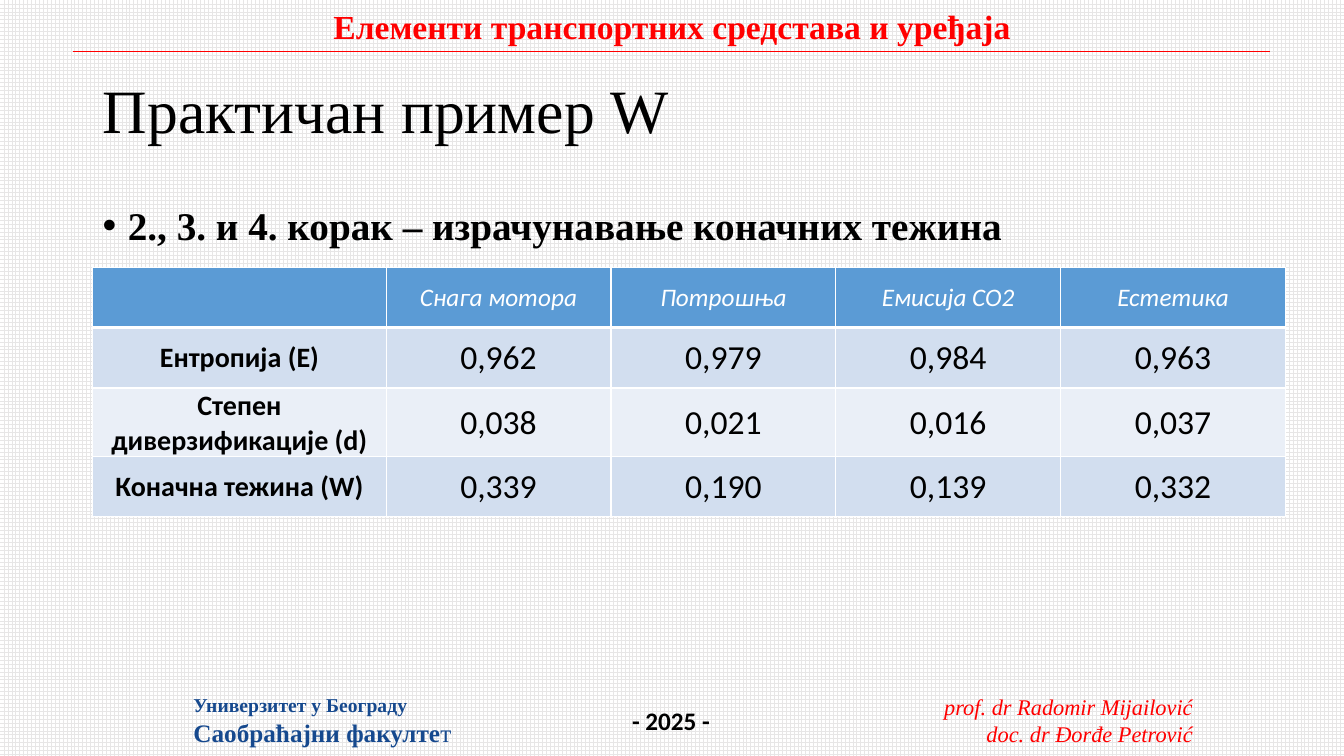
from dataclasses import dataclass
from typing import Optional

from lxml import etree
from pptx import Presentation
from pptx.dml.color import RGBColor
from pptx.enum import dml, shapes, text
from pptx.oxml import ns
from pptx.util import Inches, Pt

RED = RGBColor(0xFF, 0x00, 0x00)
BLACK = RGBColor(0x00, 0x00, 0x00)
WHITE = RGBColor(0xFF, 0xFF, 0xFF)
NAVY = RGBColor(0x16, 0x49, 0x8E)
GRID = RGBColor(0xE7, 0xE6, 0xE6)
HEADER_BLUE = RGBColor(0x5B, 0x9B, 0xD5)
BANDS = (RGBColor(0xD2, 0xDE, 0xEF), RGBColor(0xEA, 0xEF, 0xF7))
SERIF, SANS = "Times New Roman", "Calibri"
LEFT, CENTER, RIGHT = text.PP_ALIGN.LEFT, text.PP_ALIGN.CENTER, text.PP_ALIGN.RIGHT


@dataclass(frozen=True)
class Span:
    words: str
    size: float
    color: RGBColor = BLACK
    font: str = SERIF
    bold: bool = False
    italic: bool = False


@dataclass(frozen=True)
class Label:
    at: tuple[float, float, float, float]
    lines: list[list[Span]]
    align: text.PP_ALIGN = LEFT
    wrap: bool = False


LABELS = [
    Label((9.22, 6.83, 2.71, 0.64),
          [[Span("prof. dr Radomir Mijailović", 16, RED, italic=True)],
           [Span("doc. dr Đorđe Petrović", 16, RED, italic=True)]], RIGHT),
    Label((3.17, 0.01, 6.99, 0.5),
          [[Span("Елементи транспортних средстава и уређаја", 24, RED, bold=True)]], CENTER),
    Label((6.17, 6.95, 0.98, 0.4), [[Span("- 2025 -", 18, font=SANS, bold=True)]]),
    Label((1.82, 6.83, 2.79, 0.64),
          [[Span("Универзитет у Београду", 14, NAVY, bold=True)],
           [Span("Саобраћајни факулте", 18, NAVY, bold=True), Span("т", 18, NAVY)]]),
]
STEP = Label((0.92, 2, 11.5, 4.76),
             [[Span("2., 3. и 4. корак – израчунавање коначних тежина", 28, bold=True)]],
             wrap=True)
WEIGHTS = [
    ["", "Снага мотора", "Потрошња", "Емисија CO2", "Естетика"],
    ["Ентропија (Е)", "0,962", "0,979", "0,984", "0,963"],
    ["Степен диверзификације (d)", "0,038", "0,021", "0,016", "0,037"],
    ["Коначна тежина (W)", "0,339", "0,190", "0,139", "0,332"],
]
COLUMN_WIDTHS = [2.91] + [2.23] * 4
ROW_HEIGHT = 0.6


def add_span(para, span: Span) -> None:
    run = para.add_run()
    run.text = span.words
    font = run.font
    font.name, font.size = span.font, Pt(span.size)
    font.bold, font.italic = span.bold, span.italic
    font.color.rgb = span.color


def add_label(page, label: Label):
    box = page.shapes.add_textbox(*map(Inches, label.at))
    frame = box.text_frame
    frame.word_wrap = label.wrap
    frame.auto_size = (text.MSO_AUTO_SIZE.NONE if label.wrap
                       else text.MSO_AUTO_SIZE.SHAPE_TO_FIT_TEXT)
    for number, line in enumerate(label.lines):
        para = frame.add_paragraph() if number else frame.paragraphs[0]
        para.alignment = label.align
        for span in line:
            add_span(para, span)
    return box


def add_title(page) -> None:
    title = page.shapes.title
    title.left, title.top, title.width, title.height = map(Inches, (0.92, 0.4, 11.5, 1.45))
    frame = title.text_frame
    frame.word_wrap = True
    frame.auto_size = text.MSO_AUTO_SIZE.NONE
    frame.vertical_anchor = text.MSO_ANCHOR.MIDDLE
    para = frame.paragraphs[0]
    para.alignment, para.line_spacing = LEFT, 0.9
    add_span(para, Span("Практичан пример W", 44))


def add_step(page) -> None:
    para = add_label(page, STEP).text_frame.paragraphs[0]
    para.line_spacing = 0.9
    props = para._p.get_or_add_pPr()
    props.set("marL", str(Inches(0.25)))
    props.set("indent", str(Inches(-0.25)))
    etree.SubElement(props, ns.qn("a:buFont"), typeface="Arial")
    etree.SubElement(props, ns.qn("a:buChar"), char="•")


def add_header_rule(page) -> None:
    rule = page.shapes.add_connector(shapes.MSO_CONNECTOR.STRAIGHT,
                                     *map(Inches, (0.72, 0.51, 12.6, 0.51)))
    rule.line.color.rgb = RED
    rule.line.width = Pt(0.5)
    etree.SubElement(rule._element.spPr, ns.qn("a:effectLst"))


def set_border(cell, side: str, points: float) -> None:
    line = etree.SubElement(cell._tc.get_or_add_tcPr(), ns.qn(f"a:ln{side}"), w=str(Pt(points)))
    fill = etree.SubElement(line, ns.qn("a:solidFill"))
    etree.SubElement(fill, ns.qn("a:srgbClr"), val=str(WHITE))


def cell_span(words: str, row: int, column: int) -> Optional[Span]:
    if not words:
        return None
    if row == 0:
        return Span(words, 18, WHITE, SANS, italic=True)
    if column == 0:
        return Span(words, 20, font=SANS, bold=True)
    return Span(words, 24, font=SANS)


def add_weights_table(page) -> None:
    frame = page.shapes.add_table(len(WEIGHTS), len(COLUMN_WIDTHS), Inches(0.92), Inches(2.65),
                                  Inches(sum(COLUMN_WIDTHS)), Inches(ROW_HEIGHT * len(WEIGHTS)))
    table = frame.table
    for column, width in zip(table.columns, COLUMN_WIDTHS):
        column.width = Inches(width)
    for r, values in enumerate(WEIGHTS):
        table.rows[r].height = Inches(ROW_HEIGHT)
        for c, words in enumerate(values):
            cell = table.cell(r, c)
            cell.margin_left = cell.margin_right = cell.margin_top = Inches(0.01)
            cell.margin_bottom = 0
            cell.vertical_anchor = text.MSO_ANCHOR.MIDDLE
            for side in "LRTB":
                thick = (r, side) in ((0, "B"), (1, "T"))
                set_border(cell, side, 3 if thick else 1)
            cell.fill.solid()
            cell.fill.fore_color.rgb = BANDS[(r - 1) % 2] if r else HEADER_BLUE
            para = cell.text_frame.paragraphs[0]
            para.alignment = CENTER
            span = cell_span(words, r, c)
            if span:
                add_span(para, span)


def main() -> None:
    deck = Presentation()
    deck.slide_width, deck.slide_height = Inches(13.33), Inches(7.5)
    page = deck.slides.add_slide(deck.slide_layouts[5])
    backdrop = page.background.fill
    backdrop.patterned()
    backdrop.pattern = dml.MSO_PATTERN.LARGE_GRID
    backdrop.fore_color.rgb, backdrop.back_color.rgb = GRID, WHITE
    add_header_rule(page)
    for label in LABELS:
        add_label(page, label)
    add_title(page)
    add_step(page)
    add_weights_table(page)
    deck.save("out.pptx")


if __name__ == "__main__":
    main()
